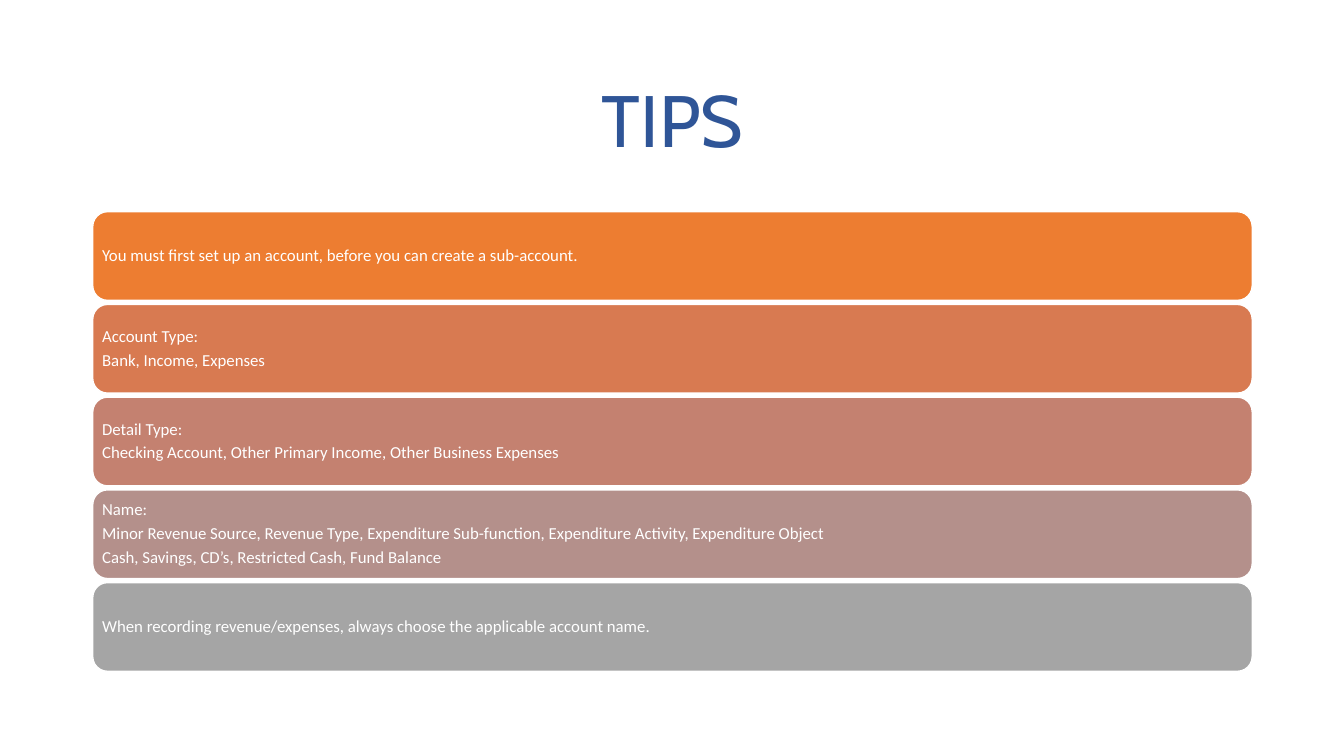
from pptx import Presentation
from pptx.dml.color import RGBColor as RGB
from pptx.enum.shapes import MSO_SHAPE as SHAPE
from pptx.enum.text import MSO_ANCHOR as ANCHOR, MSO_AUTO_SIZE as AUTO, PP_ALIGN as ALIGN
from pptx.util import Inches, Pt

COLORS = {
    "title": "2F5597",
    "white": "FFFFFF",
    "bars": ["ED7D31", "D87A51", "C48170", "B4908B", "A5A5A5"],
}

TIPS = [
    ["You must first set up an account, before you can create a sub-account."],
    ["Account Type:", "Bank, Income, Expenses"],
    ["Detail Type:", "Checking Account, Other Primary Income, Other Business Expenses"],
    ["Name:",
     "Minor Revenue Source, Revenue Type, Expenditure Sub-function, "
     "Expenditure Activity, Expenditure Object",
     "Cash, Savings, CD’s, Restricted Cash, Fund Balance"],
    ["When recording revenue/expenses, always choose the applicable account name."],
]

# Grid: one column, equal rows (inches)
LEFT, WIDTH = 0.92, 11.5
TOP, ROW, BAR_HEIGHT = 2.1, 0.92, 0.88


def place(sp, left, top, width, height):
    sp.left, sp.top = Inches(left), Inches(top)
    sp.width, sp.height = Inches(width), Inches(height)


def add_run(p, text, font, size, color):
    r = p.add_run()
    r.text = text
    r.font.name, r.font.size = font, Pt(size)
    r.font.color.rgb = RGB.from_string(color)
    p.line_spacing = 0.9


def set_title(s, text):
    sp = s.shapes.title
    place(sp, LEFT, 0.61, WIDTH, 1.24)
    tf = sp.text_frame
    tf.auto_size, tf.vertical_anchor = AUTO.NONE, ANCHOR.MIDDLE
    p = tf.paragraphs[0]
    p.alignment = ALIGN.CENTER
    add_run(p, text, "Cabin", 52, COLORS["title"])


def add_tip_bar(s, row, lines, color):
    sp = s.shapes.add_shape(SHAPE.ROUNDED_RECTANGLE, 0, 0, 0, 0)
    place(sp, LEFT, TOP + row * ROW, WIDTH, BAR_HEIGHT)
    sp.shadow.inherit = False
    sp.fill.solid()
    sp.fill.fore_color.rgb = RGB.from_string(color)
    sp.line.color.rgb = RGB.from_string(COLORS["white"])
    sp.line.width = Pt(1)

    # Text inside the bar
    tf = sp.text_frame
    tf.word_wrap, tf.vertical_anchor = True, ANCHOR.MIDDLE
    tf.margin_left = tf.margin_right = tf.margin_top = tf.margin_bottom = Inches(0.05)
    for i, line in enumerate(lines):
        p = tf.add_paragraph() if i else tf.paragraphs[0]
        p.alignment, p.space_after = ALIGN.LEFT, Pt(4)
        add_run(p, line, "Calibri", 12, COLORS["white"])


def main():
    prs = Presentation()
    prs.slide_width, prs.slide_height = Inches(13.33), Inches(7.5)
    s = prs.slides.add_slide(prs.slide_layouts[5])  # title only
    set_title(s, "TIPS")
    for row, (lines, color) in enumerate(zip(TIPS, COLORS["bars"])):
        add_tip_bar(s, row, lines, color)
    prs.save("out.pptx")


if __name__ == "__main__":
    main()
